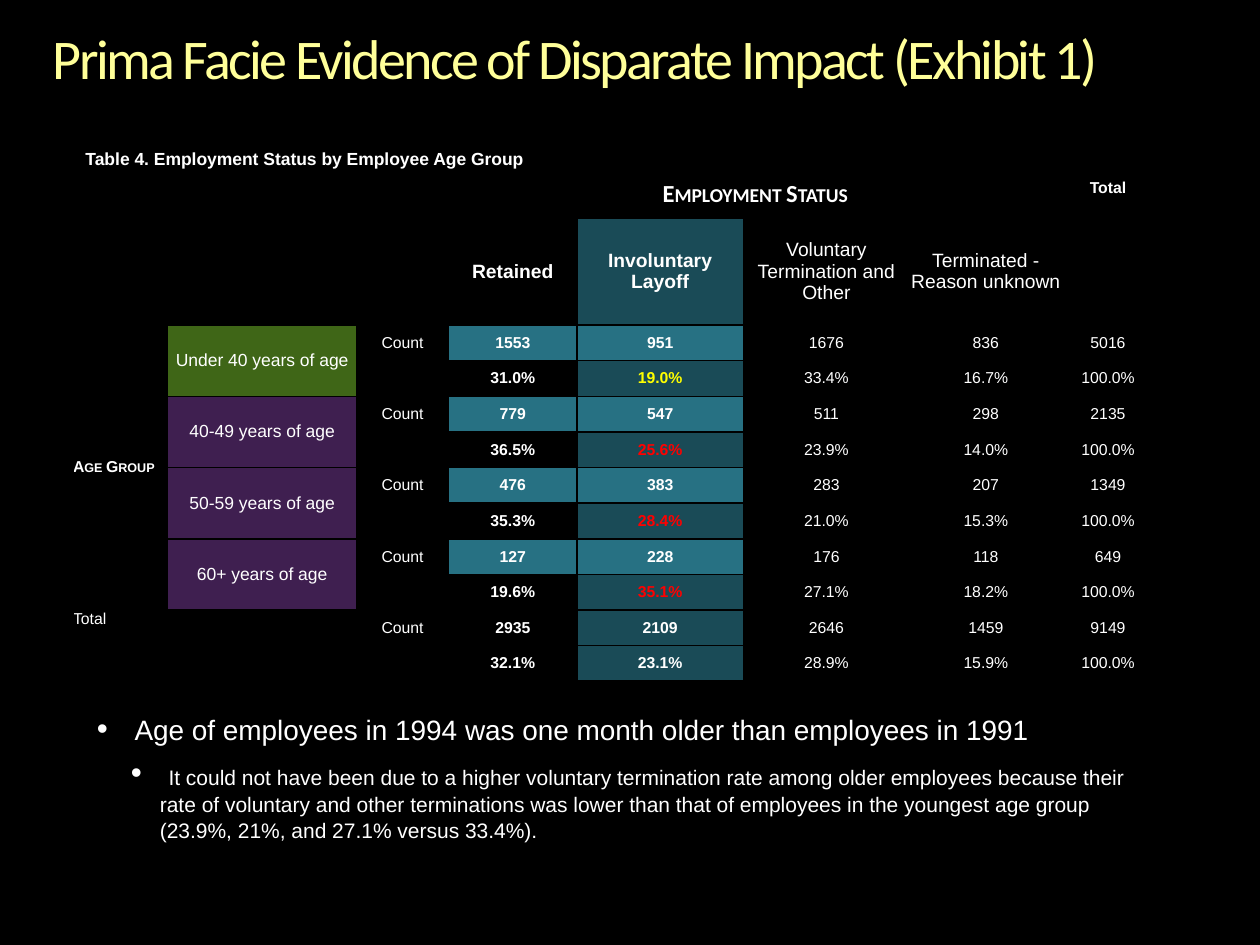
from lxml.etree import SubElement
from pptx import Presentation
from pptx.dml.color import RGBColor
from pptx.enum.text import MSO_ANCHOR as Anchor, PP_ALIGN as Align
from pptx.oxml.ns import qn
from pptx.util import Inches, Pt

BLACK = RGBColor(0x00, 0x00, 0x00)
WHITE = RGBColor(0xFF, 0xFF, 0xFF)
PALE_YELLOW = RGBColor(0xFF, 0xFF, 0x99)
YELLOW = RGBColor(0xFF, 0xFF, 0x00)
RED = RGBColor(0xFF, 0x00, 0x00)
DARK_TEAL = RGBColor(0x1A, 0x4B, 0x57)
TEAL = RGBColor(0x27, 0x71, 0x83)
GREEN = RGBColor(0x3F, 0x66, 0x17)
PURPLE = RGBColor(0x3F, 0x1F, 0x50)

COLUMN_WIDTHS = [0.75, 1.5, 0.73, 1.02, 1.32, 1.32, 1.21, 0.73]
HEADER_HEIGHTS = [Inches(0.31), Inches(0.85)]
BODY_HEIGHT = Inches(2.83) // 10
LABEL, AGE, COUNT, RETAINED, LAYOFF, TOTAL = 0, 1, 2, 3, 4, 7
STATUSES = ["Retained", "Involuntary Layoff",
            "Voluntary Termination and Other", "Terminated - Reason unknown"]

# age group, its fill, colour of the layoff rate, counts, percentages
GROUPS = [
    ("Under 40 years of age", GREEN, YELLOW, "1553 951 1676 836 5016",
     "31.0% 19.0% 33.4% 16.7% 100.0%"),
    ("40-49 years of age", PURPLE, RED, "779 547 511 298 2135",
     "36.5% 25.6% 23.9% 14.0% 100.0%"),
    ("50-59 years of age", PURPLE, RED, "476 383 283 207 1349",
     "35.3% 28.4% 21.0% 15.3% 100.0%"),
    ("60+ years of age", PURPLE, RED, "127 228 176 118 649",
     "19.6% 35.1% 27.1% 18.2% 100.0%"),
    (None, None, WHITE, "2935 2109 2646 1459 9149",
     "32.1% 23.1% 28.9% 15.9% 100.0%"),
]


def add_span(para, text, color=WHITE, caps=None, spacing=None, **formats):
    span = para.add_run()
    span.text = text
    span.font.color.rgb = color
    for name, value in ({"name": "Arial"} | formats).items():
        setattr(span.font, name, value)
    for name, value in (("cap", caps), ("spc", spacing)):
        if value:
            span.font._element.set(name, value)


def add_box(page, left, top, width, height, **formats):
    box = page.shapes.add_textbox(Inches(left), Inches(top), Inches(width), Inches(height))
    frame = box.text_frame
    frame.word_wrap = True
    for name, value in formats.items():
        setattr(frame, name, value)
    return frame


def add_bullet(para, left, hanging):
    props = para._p.get_or_add_pPr()
    props.set("marL", str(Inches(left)))
    props.set("indent", str(-Inches(hanging)))
    SubElement(props, qn("a:buFont"), typeface="Arial")
    SubElement(props, qn("a:buChar"), char="•")


def clear_cell(cell):
    """Give a cell no fill, no margins, black borders and a small empty line."""
    for side in ("left", "top", "right", "bottom"):
        setattr(cell, f"margin_{side}", 0)
    props = cell._tc.get_or_add_tcPr()
    for edge in ("a:lnL", "a:lnR", "a:lnT", "a:lnB"):
        line = SubElement(props, qn(edge), w=str(Pt(1)))
        color = SubElement(SubElement(line, qn("a:solidFill")), qn("a:srgbClr"))
        color.set("val", str(BLACK))
    cell.fill.background()
    SubElement(cell.text_frame.paragraphs[0]._p, qn("a:endParaRPr"), sz="900")


def write_cell(cell, text, size=9, fill=None, align=Align.CENTER,
               anchor=Anchor.MIDDLE, **formats):
    para = cell.text_frame.paragraphs[0]
    para.alignment = align
    cell.vertical_anchor = anchor
    add_span(para, text, size=Pt(size), **formats)
    if fill:
        cell.fill.solid()
        cell.fill.fore_color.rgb = fill


def write_headers(table):
    table.cell(0, RETAINED).merge(table.cell(0, TOTAL - 1))
    write_cell(table.cell(0, RETAINED), "Employment Status", 14, anchor=Anchor.TOP,
               name="Calibri", bold=True, caps="small")
    write_cell(table.cell(0, TOTAL), "Total", anchor=Anchor.TOP, bold=True)
    for column, status in enumerate(STATUSES, RETAINED):
        write_cell(table.cell(1, column), status, 11, bold=column <= LAYOFF,
                   fill=DARK_TEAL if column == LAYOFF else None)


def write_group(table, row, group):
    """Write the count row and the percentage row of one age group."""
    age, age_fill, rate_color, counts, rates = group
    if age:
        table.cell(row, AGE).merge(table.cell(row + 1, AGE))
        write_cell(table.cell(row, AGE), age, 10, age_fill)
    write_cell(table.cell(row, COUNT), "Count")
    count_fills = {RETAINED: TEAL, LAYOFF: TEAL} if age else {LAYOFF: DARK_TEAL}
    for column, (count, rate) in enumerate(zip(counts.split(), rates.split()), RETAINED):
        bold = column <= LAYOFF
        layoff = column == LAYOFF
        write_cell(table.cell(row, column), count, bold=bold, fill=count_fills.get(column))
        write_cell(table.cell(row + 1, column), rate, bold=bold,
                   fill=DARK_TEAL if layoff else None,
                   color=rate_color if layoff else WHITE)


def add_status_table(page):
    heights = HEADER_HEIGHTS + [BODY_HEIGHT] * (2 * len(GROUPS))
    table = page.shapes.add_table(len(heights), len(COLUMN_WIDTHS), Inches(0.58),
                                  Inches(1.42), Inches(8.58), sum(heights)).table
    table.first_row = table.horz_banding = False
    for column, width in zip(table.columns, COLUMN_WIDTHS):
        column.width = Inches(width)
    for row, height in zip(table.rows, heights):
        row.height = height
        for cell in row.cells:
            clear_cell(cell)
    for cell in table.iter_cells():
        # Runs must precede the end mark, so each paragraph keeps it last.
        cell.vertical_anchor = Anchor.MIDDLE
    write_headers(table)
    first = len(HEADER_HEIGHTS)
    last = len(heights) - 2
    table.cell(first, LABEL).merge(table.cell(last - 1, LABEL))
    write_cell(table.cell(first, LABEL), "Age Group", align=Align.LEFT,
               bold=True, caps="small")
    write_cell(table.cell(last, LABEL), "Total", align=Align.LEFT, anchor=Anchor.TOP)
    for index, group in enumerate(GROUPS):
        write_group(table, first + 2 * index, group)


def add_notes_on_age(page):
    frame = add_box(page, 0.67, 5.58, 8.42, 1.11)
    main_point = frame.paragraphs[0]
    detail = frame.add_paragraph()
    detail.level = 1
    detail.space_before = Pt(4)
    for para, left, size, text in (
        (main_point, 0.23, 16,
         "Age of employees in 1994 was one month older than employees in 1991"),
        (detail, 0.5, 12,
         "It could not have been due to a higher voluntary termination rate among older "
         "employees because their rate of voluntary and other terminations was lower than "
         "that of employees in the youngest age group (23.9%, 21%, and 27.1% versus 33.4%)."),
    ):
        add_bullet(para, left, 0.23)
        add_span(para, " ", size=Pt(18))
        add_span(para, text, size=Pt(size))


def main():
    deck = Presentation()
    deck.slide_width, deck.slide_height = Inches(10), Inches(7.5)
    page = deck.slides.add_slide(deck.slide_layouts[6])
    page.background.fill.solid()
    page.background.fill.fore_color.rgb = BLACK

    title = add_box(page, 0.42, 0.25, 9.17, 0.48, margin_left=0, margin_top=0,
                    margin_right=0, margin_bottom=0).paragraphs[0]
    title.line_spacing = 0.9
    add_span(title, "Prima Facie Evidence of Disparate Impact (Exhibit 1)", PALE_YELLOW,
             spacing="-150", name="Calibri", size=Pt(32))

    add_status_table(page)
    caption = add_box(page, 0.58, 1.12, 9.42, 0.27, vertical_anchor=Anchor.MIDDLE)
    add_span(caption.paragraphs[0], "Table 4. Employment Status by Employee Age Group",
             size=Pt(10), bold=True)
    add_notes_on_age(page)
    deck.save("out.pptx")


if __name__ == "__main__":
    main()
